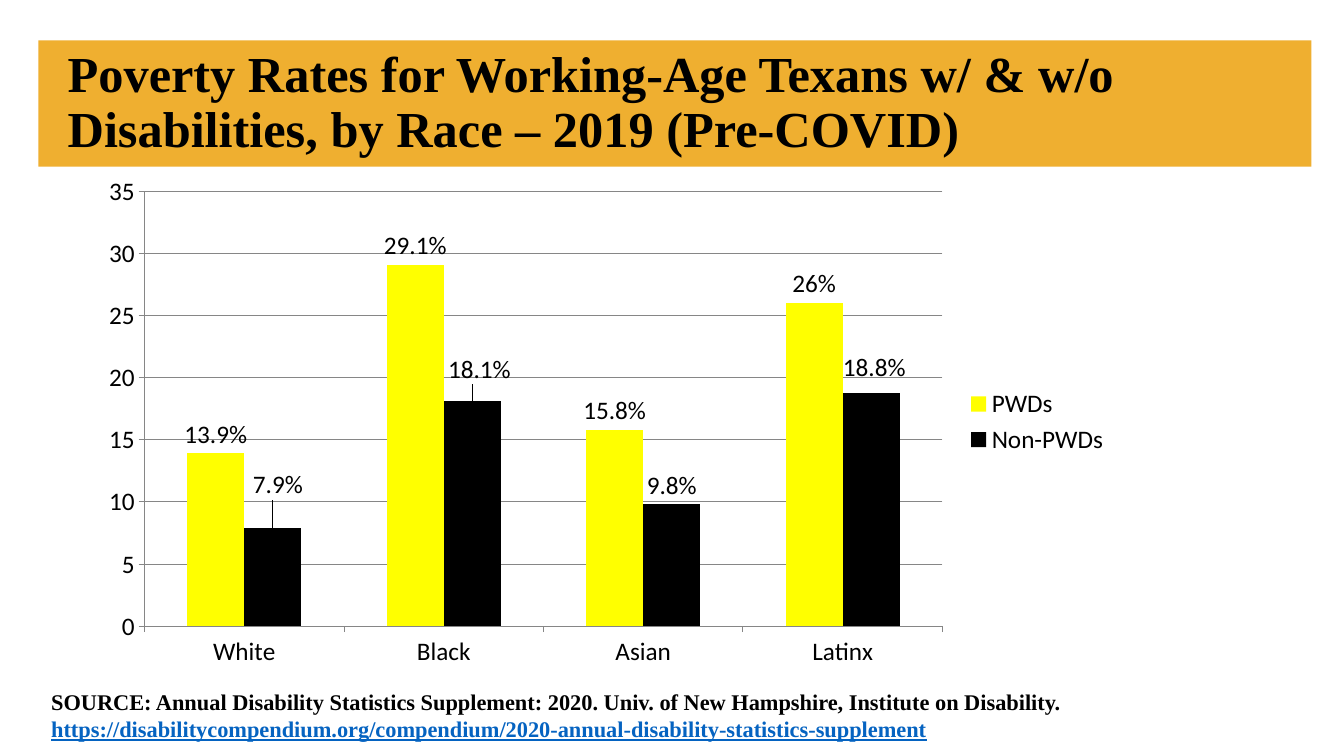
from lxml.etree import SubElement
from pptx import Presentation
from pptx.chart.data import CategoryChartData
from pptx.dml.color import RGBColor
from pptx.enum.chart import XL_CHART_TYPE, XL_LABEL_POSITION, XL_LEGEND_POSITION, XL_TICK_MARK
from pptx.enum.shapes import MSO_SHAPE
from pptx.enum.text import MSO_ANCHOR, PP_ALIGN
from pptx.oxml import parse_xml
from pptx.oxml.ns import nsdecls, qn
from pptx.util import Cm, Pt

GOLD = RGBColor(0xEF, 0xAF, 0x30)
YELLOW = RGBColor(0xFF, 0xFF, 0x00)
BLACK = RGBColor(0x00, 0x00, 0x00)
GRAY = RGBColor(0x86, 0x86, 0x86)
LINK_BLUE = RGBColor(0x05, 0x63, 0xC1)
SERIF = "Times New Roman"
PERCENT = 'General"%"'
RACES = ["White", "Black", "Asian", "Latinx"]
RATES = [
    ("PWDs", [13.9, 29.1, 15.8, 26], YELLOW),
    ("Non-PWDs", [7.9, 18.1, 9.8, 18.8], BLACK),
]
NON_PWD_LABEL_SHIFTS = {0: (0.005, -0.047), 1: (0.007, -0.025), 3: (0.003, -0.012)}


def add_span(para, text, size, color=BLACK, underline=False):
    span = para.add_run()
    span.text = text
    span.font.name = SERIF
    span.font.size = Pt(size)
    span.font.bold = True
    span.font.underline = underline
    span.font.color.rgb = color


def add_band(page):
    band = page.shapes.add_shape(MSO_SHAPE.RECTANGLE, Cm(0.97), Cm(1.02), Cm(32.08), Cm(3.18))
    band.shadow.inherit = False
    band.fill.solid()
    band.fill.fore_color.rgb = GOLD
    band.line.fill.background()
    page.shapes.element.insert(2, band.element)


def set_title(page, text):
    title = page.shapes.title
    title.left, title.top, title.width, title.height = Cm(1.45), Cm(1.02), Cm(29.21), Cm(3.18)
    title.text_frame.word_wrap = True
    title.text_frame.vertical_anchor = MSO_ANCHOR.MIDDLE
    para = title.text_frame.paragraphs[0]
    para.alignment = PP_ALIGN.LEFT
    para.line_spacing = 0.9
    add_span(para, text, 36)


def add_source(page, citation, address):
    box = page.shapes.add_textbox(Cm(1.04), Cm(17.22), Cm(32.82), Cm(2.31))
    frame = box.text_frame
    frame.word_wrap = True
    add_span(frame.paragraphs[0], citation, 16)
    add_span(frame.add_paragraph(), address, 16, LINK_BLUE, True)


def manual_layout(**settings):
    layout = parse_xml(f"<c:layout {nsdecls('c')}><c:manualLayout/></c:layout>")
    for name, value in settings.items():
        SubElement(layout[0], qn(f"c:{name}")).set("val", str(value))
    return layout


def style_axis(axis):
    axis.major_tick_mark = XL_TICK_MARK.OUTSIDE
    axis.minor_tick_mark = XL_TICK_MARK.NONE
    axis.format.line.color.rgb = GRAY
    axis.format.line.width = Pt(0.75)


def style_series(series, color):
    series.format.fill.solid()
    series.format.fill.fore_color.rgb = color
    labels = series.data_labels
    labels.show_value = True
    labels.number_format = PERCENT
    labels.number_format_is_linked = False
    labels.position = XL_LABEL_POSITION.OUTSIDE_END
    labels.font.size = Pt(18)


def shift_labels(series, shifts):
    for index, (x, y) in shifts.items():
        label = series.points[index].data_label
        label.font.size = Pt(18)
        label.position = XL_LABEL_POSITION.OUTSIDE_END
    for element, (x, y) in zip(series.data_labels._element.findall(qn("c:dLbl")), shifts.values()):
        number_format = parse_xml(f"<c:numFmt {nsdecls('c')} sourceLinked='0'/>")
        number_format.set("formatCode", PERCENT)
        element.insert(1, manual_layout(x=x, y=y))
        element.insert(2, number_format)


def add_rates_chart(page):
    data = CategoryChartData()
    data.categories = RACES
    for name, values, color in RATES:
        data.add_series(name, values)
    chart = page.shapes.add_chart(
        XL_CHART_TYPE.COLUMN_CLUSTERED, Cm(2.24), Cm(4.19), Cm(25.98), Cm(12.88), data
    ).chart
    chart.has_title = False
    chart.font.name = "Calibri"
    chart.font.size = Pt(18)
    chart.font.color.rgb = BLACK
    chart.has_legend = True
    chart.legend.position = XL_LEGEND_POSITION.RIGHT
    chart.legend.include_in_layout = False
    style_axis(chart.category_axis)
    style_axis(chart.value_axis)
    chart.value_axis.minimum_scale = 0
    chart.value_axis.maximum_scale = 35
    chart.value_axis.major_unit = 5
    gridlines = chart.value_axis.major_gridlines.format.line
    gridlines.color.rgb = GRAY
    gridlines.width = Pt(0.75)
    plot = chart.plots[0]
    plot.gap_width = 150
    plot.overlap = 0
    plot.vary_by_categories = False
    for series, (name, values, color) in zip(plot.series, RATES):
        style_series(series, color)
    shift_labels(plot.series[1], NON_PWD_LABEL_SHIFTS)
    area = plot._element.getparent()
    for layout in area.findall(qn("c:layout")):
        area.remove(layout)
    area.insert(0, manual_layout(layoutTarget="inner", xMode="edge", yMode="edge",
                                 x=0.054, y=0.049, w=0.774, h=0.851))


def main():
    deck = Presentation()
    deck.slide_width, deck.slide_height = Cm(33.87), Cm(19.05)
    page = deck.slides.add_slide(deck.slide_layouts[5])
    add_band(page)
    set_title(page, "Poverty Rates for Working-Age Texans w/ & w/o Disabilities, by Race – 2019 (Pre-COVID)")
    add_source(
        page,
        "SOURCE: Annual Disability Statistics Supplement: 2020. Univ. of New Hampshire, Institute on Disability.",
        "https://disabilitycompendium.org/compendium/2020-annual-disability-statistics-supplement",
    )
    add_rates_chart(page)
    deck.save("out.pptx")


if __name__ == "__main__":
    main()
